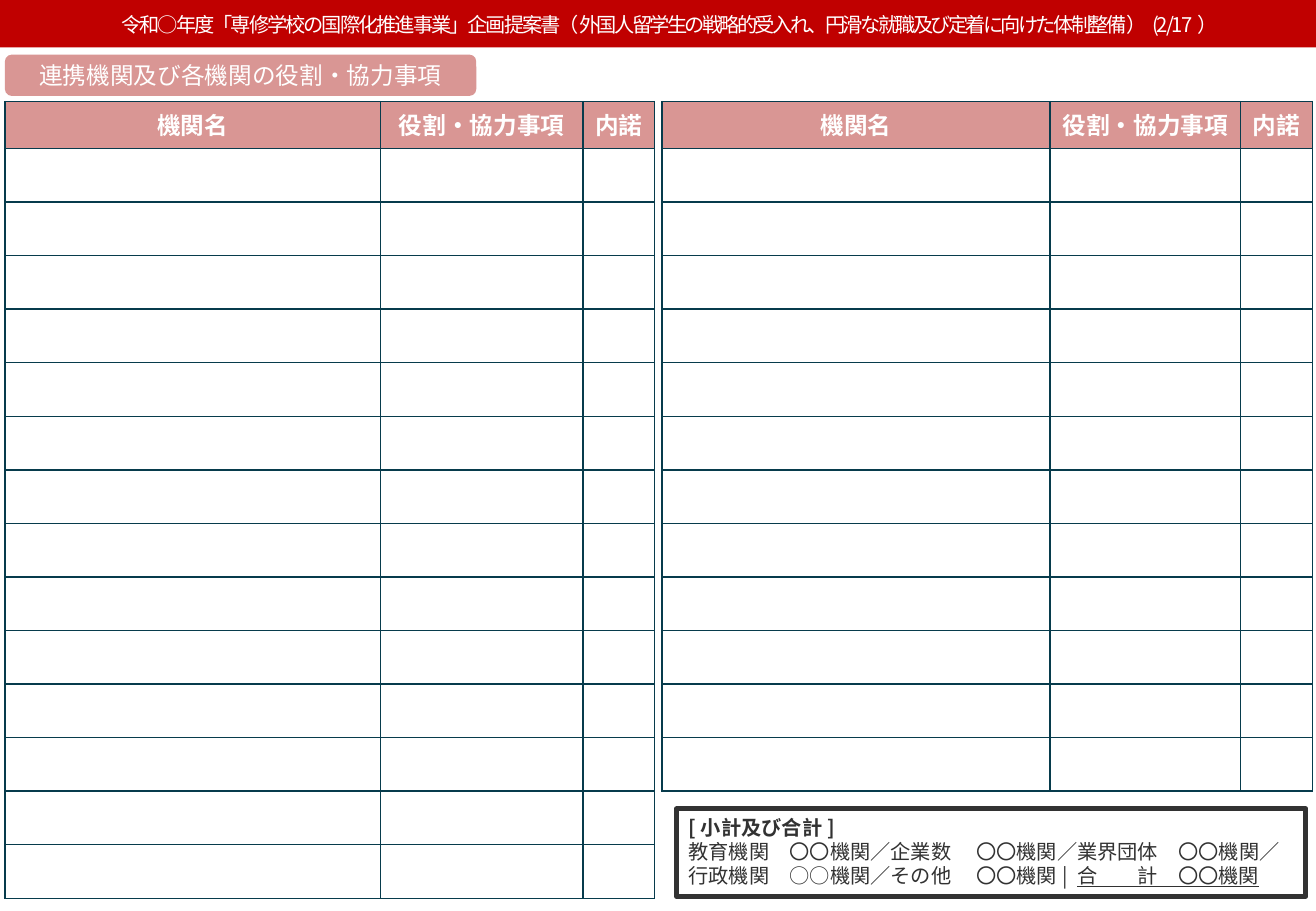
from lxml.etree import SubElement
from pptx import Presentation
from pptx.dml.color import RGBColor
from pptx.enum.shapes import MSO_SHAPE
from pptx.enum.text import MSO_ANCHOR, MSO_AUTO_SIZE, PP_ALIGN
from pptx.oxml.ns import qn
from pptx.util import Pt

JP = "Noto Sans CJK JP"
RED, PINK, WHITE, DARK, TEAL = "C00000", "D99694", "FFFFFF", "323232", "073B4C"
HEADINGS = ["機関名", "役割・協力事項", "内諾"]
HEAD_H, ROW_H = 27.8, 31.75


def rgb(value):
    return RGBColor.from_string(value)


def style_run(r, size, color, font=JP, bold=False, spacing=None):
    r.font.size = Pt(size)
    r.font.bold = bold
    r.font.color.rgb = rgb(color)
    r.font.name = font
    rPr = r._r.get_or_add_rPr()
    SubElement(rPr, qn("a:ea")).set("typeface", font)
    if spacing is not None:
        rPr.set("spc", str(round(spacing * 100)))


def add_box(s, kind, box, fill=None, line=None, width=1):
    sp = s.shapes.add_shape(kind, *map(Pt, box))
    sp.shadow.inherit = False
    if fill:
        sp.fill.solid()
        sp.fill.fore_color.rgb = rgb(fill)
    else:
        sp.fill.background()
    if line:
        sp.line.color.rgb = rgb(line)
        sp.line.width = Pt(width)
    else:
        sp.line.fill.background()
    return sp


def add_banner(s, box, parts):
    x, y, w, h = box
    bar = add_box(s, MSO_SHAPE.RECTANGLE, box, RED)
    title = s.shapes.title
    title.element.addprevious(bar.element)
    title.left, title.top = Pt(x + 36), Pt(y + 3.6)
    title.width, title.height = Pt(w - 58.3), Pt(h - 6.5)
    title.fill.solid()
    title.fill.fore_color.rgb = rgb(RED)
    tf = title.text_frame
    tf.auto_size = MSO_AUTO_SIZE.NONE
    tf.word_wrap = True
    tf.vertical_anchor = MSO_ANCHOR.MIDDLE
    tf.margin_top = tf.margin_bottom = 0
    p = tf.paragraphs[0]
    p.alignment = PP_ALIGN.CENTER
    for text, spacing in parts:
        r = p.add_run()
        r.text = text
        style_run(r, 12, WHITE, spacing=spacing)


def add_section_label(s, box, text):
    tf = add_box(s, MSO_SHAPE.ROUNDED_RECTANGLE, box, PINK).text_frame
    tf.text = text
    tf.vertical_anchor = MSO_ANCHOR.MIDDLE
    p = tf.paragraphs[0]
    p.alignment = PP_ALIGN.CENTER
    style_run(p.runs[0], 14, WHITE)


def set_borders(cell, color, width):
    tcPr = cell._tc.get_or_add_tcPr()
    for side in ("lnL", "lnR", "lnT", "lnB"):
        ln = SubElement(tcPr, qn(f"a:{side}"), w=str(Pt(width)))
        fill = SubElement(ln, qn("a:solidFill"))
        SubElement(fill, qn("a:srgbClr"), val=color)


def add_partner_table(s, x, y, widths, body_rows):
    height = HEAD_H + ROW_H * body_rows
    frame = s.shapes.add_table(body_rows + 1, len(widths), Pt(x), Pt(y), Pt(sum(widths)), Pt(height))
    table = frame.table
    table.horz_banding = False
    for col, width in zip(table.columns, widths):
        col.width = Pt(width)
    for i, row in enumerate(table.rows):
        row.height = Pt(ROW_H if i else HEAD_H)
        for cell in row.cells:
            set_borders(cell, TEAL, 1)
            cell.fill.background()
    for cell, heading in zip(table.rows[0].cells, HEADINGS):
        cell.fill.solid()
        cell.fill.fore_color.rgb = rgb(PINK)
        cell.text = heading
        cell.vertical_anchor = MSO_ANCHOR.MIDDLE
        cell.margin_left = cell.margin_right = Pt(3.6)
        p = cell.text_frame.paragraphs[0]
        p.alignment = PP_ALIGN.CENTER
        style_run(p.runs[0], 14, WHITE, "Lato", True)


def add_totals(s, box, lines, total):
    tf = add_box(s, MSO_SHAPE.RECTANGLE, box, line=DARK, width=3).text_frame
    tf.text = "\n".join(lines)
    tf.word_wrap = True
    tf.vertical_anchor = MSO_ANCHOR.TOP
    r = tf.paragraphs[-1].add_run()
    r.text = total
    r.font.underline = True
    for i, p in enumerate(tf.paragraphs):
        p.alignment = PP_ALIGN.LEFT
        p.line_spacing = Pt(14.4)
        for r in p.runs:
            style_run(r, 12, DARK, bold=i == 0)


def main():
    prs = Presentation()
    prs.slide_width, prs.slide_height = Pt(780), Pt(540)
    s = prs.slides.add_slide(prs.slide_layouts[5])
    add_section_label(s, (2.9, 32.4, 279.4, 24.5), "連携機関及び各機関の役割・協力事項")
    add_totals(
        s,
        (401, 479.5, 373, 51.8),
        [
            "[小計及び合計]",
            "教育機関　〇〇機関／企業数　 〇〇機関／業界団体　〇〇機関／",
            "行政機関　○○機関／その他　 〇〇機関| ",
        ],
        "合　　計　〇〇機関",
    )
    add_partner_table(s, 2.9, 60.2, (222.5, 120.2, 42.5), 14)
    add_partner_table(s, 392.4, 60.2, (230, 113, 42.5), 12)
    add_banner(
        s,
        (0, 0, 780, 28.1),
        [
            ("令和○年度「専修学校の国際化推進事業」企画提案書（", -1.2),
            ("外国人留学生の戦略的受入れ、円滑な就職及び定着に向けた体制整備", -1.6),
            ("）(2/17）", -1.2),
        ],
    )
    prs.save("out.pptx")


if __name__ == "__main__":
    main()
